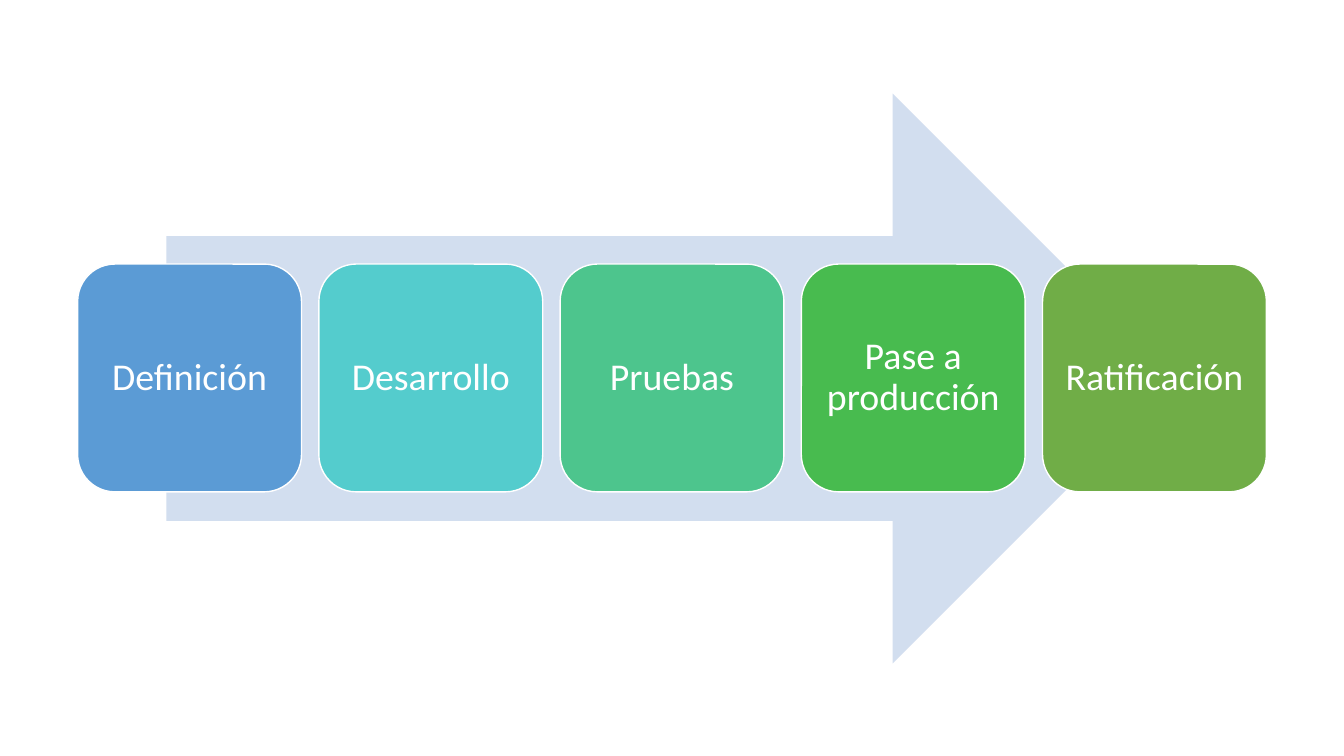
from pptx import Presentation
from pptx.dml.color import RGBColor
from pptx.enum import shapes, text
from pptx.util import Inches, Pt

WHITE = RGBColor(0xFF, 0xFF, 0xFF)
PALE_BLUE = RGBColor(0xD2, 0xDE, 0xEF)
BLUE = RGBColor(0x5B, 0x9B, 0xD5)
TURQUOISE = RGBColor(0x54, 0xCC, 0xCD)
MINT = RGBColor(0x4D, 0xC5, 0x8D)
GREEN = RGBColor(0x48, 0xBB, 0x4F)
OLIVE = RGBColor(0x70, 0xAD, 0x47)

STAGES = [
    ("Definición", BLUE),
    ("Desarrollo", TURQUOISE),
    ("Pruebas", MINT),
    ("Pase a producción", GREEN),
    ("Ratificación", OLIVE),
]
FIRST_LEFT, LAST_LEFT = 0.77, 10.34
STAGE_STEP = (LAST_LEFT - FIRST_LEFT) / (len(STAGES) - 1)

deck = Presentation()
deck.slide_width = Inches(13.33)
deck.slide_height = Inches(7.5)
page = deck.slides.add_slide(deck.slide_layouts[6])

arrow = page.shapes.add_shape(
    shapes.MSO_SHAPE.RIGHT_ARROW,
    Inches(1.65), Inches(0.93), Inches(10.03), Inches(5.65))
arrow.shadow.inherit = False
arrow.fill.solid()
arrow.fill.fore_color.rgb = PALE_BLUE
arrow.line.fill.background()

for index, (name, color) in enumerate(STAGES):
    stage = page.shapes.add_shape(
        shapes.MSO_SHAPE.ROUNDED_RECTANGLE,
        Inches(FIRST_LEFT + index * STAGE_STEP), Inches(2.62),
        Inches(2.22), Inches(2.26))
    stage.shadow.inherit = False
    stage.fill.solid()
    stage.fill.fore_color.rgb = color
    stage.line.color.rgb = WHITE
    stage.line.width = Pt(1)

    frame = stage.text_frame
    frame.word_wrap = True
    frame.vertical_anchor = text.MSO_ANCHOR.MIDDLE
    frame.margin_left = frame.margin_right = Inches(0.11)
    frame.margin_top = frame.margin_bottom = Inches(0.11)
    para = frame.paragraphs[0]
    para.text = name
    para.alignment = text.PP_ALIGN.CENTER
    para.line_spacing = 0.9
    para.font.name = "Calibri"
    para.font.size = Pt(27)
    para.font.color.rgb = WHITE

deck.save("out.pptx")
